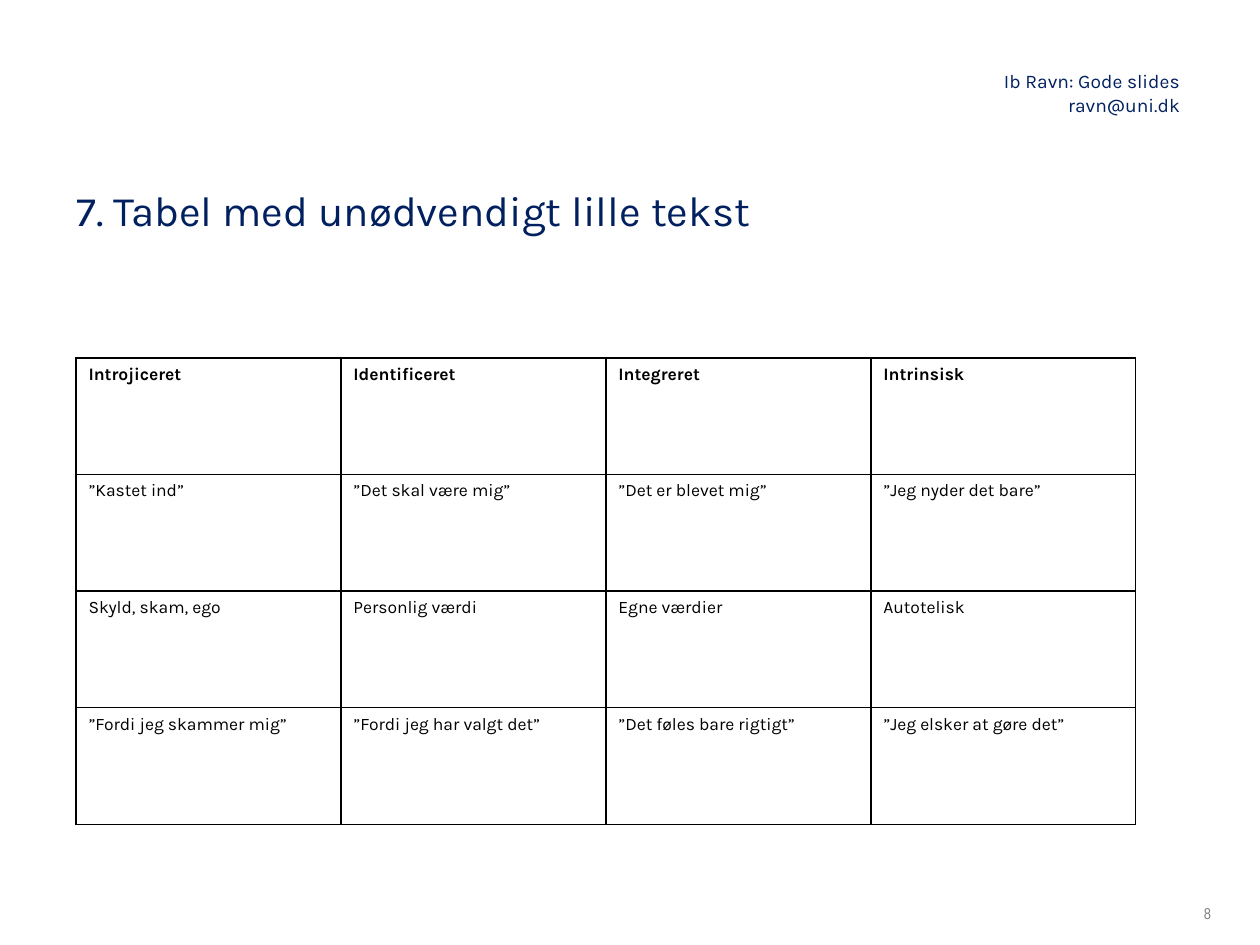
from dataclasses import dataclass

from lxml.etree import SubElement
from pptx import Presentation
from pptx.dml.color import RGBColor
from pptx.enum.text import MSO_ANCHOR, PP_ALIGN
from pptx.oxml.ns import qn
from pptx.util import Pt


@dataclass(frozen=True)
class Theme:
    font: str = "Karla"
    number_font: str = "Arial Narrow"
    navy: str = "002060"
    black: str = "000000"
    grey: str = "808080"
    title_size: float = 24
    header_size: float = 11
    table_size: float = 10
    number_size: float = 9
    border: float = 1


THEME = Theme()
ROWS = [
    ["Introjiceret", "Identificeret", "Integreret", "Intrinsisk"],
    ["”Kastet ind”", "”Det skal være mig”", "”Det er blevet mig”", "”Jeg nyder det bare”"],
    ["Skyld, skam, ego", "Personlig værdi", "Egne værdier", "Autotelisk"],
    ["”Fordi jeg skammer mig”", "”Fordi jeg har valgt det”",
     "”Det føles bare rigtigt”", "”Jeg elsker at gøre det”"],
]


def style_run(r, size, color, font=THEME.font, bold=False):
    r.font.name = font
    r.font.size = Pt(size)
    r.font.bold = bold
    r.font.color.rgb = RGBColor.from_string(color)


def add_text(slide, box, text, size, color, font=THEME.font,
             align=PP_ALIGN.LEFT, anchor=MSO_ANCHOR.BOTTOM, spacing=1.02):
    sp = slide.shapes.add_textbox(*map(Pt, box))
    tf = sp.text_frame
    tf.margin_left = tf.margin_right = tf.margin_top = tf.margin_bottom = 0
    tf.word_wrap = True
    tf.vertical_anchor = anchor
    tf.text = text
    for p in tf.paragraphs:
        p.alignment = align
        p.line_spacing = spacing
        for r in p.runs:
            style_run(r, size, color, font)


def add_header(slide, box):
    add_text(slide, box, "Ib Ravn: Gode slides\nravn@uni.dk",
             THEME.header_size, THEME.navy, align=PP_ALIGN.RIGHT)


def add_title(slide, box):
    add_text(slide, box, "7. Tabel med unødvendigt lille tekst",
             THEME.title_size, THEME.navy, spacing=0.83)


def add_page_number(slide, box):
    add_text(slide, box, "8", THEME.number_size, THEME.grey, THEME.number_font,
             PP_ALIGN.RIGHT, MSO_ANCHOR.TOP)


def set_borders(cell):
    """Draw all four cell edges; they must precede the fill in tcPr."""
    tc_pr = cell._tc.get_or_add_tcPr()
    for edge in ("a:lnL", "a:lnR", "a:lnT", "a:lnB"):
        ln = SubElement(tc_pr, qn(edge), w=str(Pt(THEME.border)))
        fill = SubElement(ln, qn("a:solidFill"))
        SubElement(fill, qn("a:srgbClr"), val=THEME.black)


def add_motivation_table(slide, box):
    left, top, width, height = box
    n_rows, n_cols = len(ROWS), len(ROWS[0])
    table = slide.shapes.add_table(n_rows, n_cols, *map(Pt, box)).table
    table.first_row = table.horz_banding = False
    for column in table.columns:
        column.width = Pt(width / n_cols)
    for i, values in enumerate(ROWS):
        table.rows[i].height = Pt(height / n_rows)
        for j, value in enumerate(values):
            cell = table.cell(i, j)
            set_borders(cell)
            cell.fill.background()
            cell.text = value
            style_run(cell.text_frame.paragraphs[0].runs[0],
                      THEME.table_size, THEME.black, bold=i == 0)


def main():
    prs = Presentation()
    prs.slide_width, prs.slide_height = Pt(720), Pt(540)
    slide = prs.slides.add_slide(prs.slide_layouts[6])
    add_header(slide, (567, 27.4, 107.3, 38.9))
    add_page_number(slide, (524, 516.5, 168, 11))
    add_title(slide, (43.9, 94.3, 635, 39.6))
    add_motivation_table(slide, (43.4, 204.5, 605.6, 266.6))
    prs.save("out.pptx")


if __name__ == "__main__":
    main()
